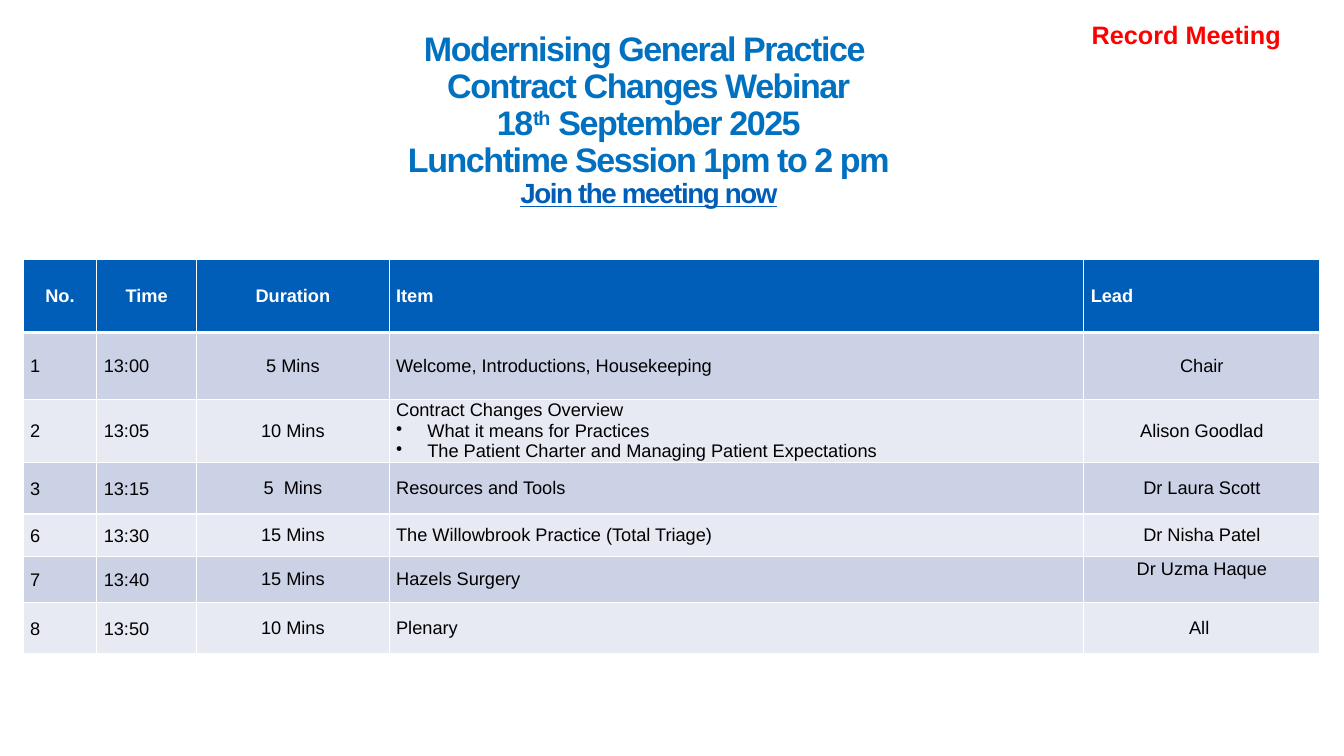
from copy import deepcopy

from lxml import etree
from pptx import Presentation
from pptx.dml.color import RGBColor
from pptx.enum.text import MSO_ANCHOR, MSO_AUTO_SIZE, PP_ALIGN
from pptx.oxml.ns import qn
from pptx.util import Inches, Pt

LEFT, CENTER = PP_ALIGN.LEFT, PP_ALIGN.CENTER
MIDDLE = MSO_ANCHOR.MIDDLE
NO_FIT, GROW = MSO_AUTO_SIZE.NONE, MSO_AUTO_SIZE.SHAPE_TO_FIT_TEXT

COLORS = {
    "title": "0070C0", "header": "005EB8", "alert": "FF0000",
    "text": "000000", "white": "FFFFFF",
    "odd_row": "CCD2E6", "even_row": "E7EAF3",
}

# Each title line is a list of (text, size, colour, superscript, underline)
TITLE_LINES = [
    [("Modernising General Practice ", 24.3, "title", False, False)],
    [("Contract Changes Webinar", 24.3, "title", False, False)],
    [("18", 24.3, "title", False, False),
     ("th", 24.3, "title", True, False),
     (" September 2025", 24.3, "title", False, False)],
    [("Lunchtime Session 1pm to 2 pm", 24.3, "title", False, False)],
    [("Join the meeting now", 19.8, "header", False, True)],
]

# Lines of an item after the first are bullets
AGENDA = [
    ("No.", "Time", "Duration", "Item", "Lead"),
    ("1", "13:00", "5 Mins", "Welcome, Introductions, Housekeeping", "Chair"),
    ("2", "13:05", "10 Mins",
     "Contract Changes Overview\nWhat it means for Practices\n"
     "The Patient Charter and Managing Patient Expectations",
     "Alison Goodlad"),
    ("3", "13:15", "5  Mins", "Resources and Tools", "Dr Laura Scott"),
    ("6", "13:30", "15 Mins", "The Willowbrook Practice (Total Triage)", "Dr Nisha Patel"),
    ("7", "13:40", "15 Mins", "Hazels Surgery", "Dr Uzma Haque"),
    ("8", "13:50", "10 Mins", "Plenary", "All "),
]
COLUMN_WIDTHS = [0.73, 0.99, 1.91, 6.89, 2.34]
ROW_HEIGHTS = [0.73, 0.66, 0.63, 0.51, 0.42, 0.46, 0.51]
HEADER_ALIGN = [CENTER, CENTER, CENTER, LEFT, LEFT]
BODY_ALIGN = [LEFT, LEFT, CENTER, LEFT, CENTER]
RAISED_LEAD = (5, 4)


class AgendaSlide:
    def __init__(self, slide, font="Arial"):
        self.slide = slide
        self.font = font

    def style(self, font, size, color, bold=False):
        font.name, font.size, font.bold = self.font, Pt(size), bold
        font.color.rgb = RGBColor.from_string(COLORS[color])

    def place(self, shape, left, top, width, height):
        shape.left, shape.top = Inches(left), Inches(top)
        shape.width, shape.height = Inches(width), Inches(height)

    def title(self, lines, *box):
        title = self.slide.shapes.title
        self.place(title, *box)
        frame = title.text_frame
        frame.word_wrap, frame.auto_size = True, NO_FIT
        frame.vertical_anchor = MIDDLE
        paragraph = frame.paragraphs[0]
        paragraph.alignment, paragraph.line_spacing = CENTER, 0.9
        properties = None
        for line in lines:
            if properties is not None:
                # The break takes the size of the line it ends
                paragraph.add_line_break()
                paragraph._p[-1].append(deepcopy(properties))
            for text, size, color, superscript, underline in line:
                run = paragraph.add_run()
                run.text = text
                self.style(run.font, size, color, bold=True)
                run.font.underline = underline
                properties = run._r.get_or_add_rPr()
                properties.set("spc", "-100")
                if superscript:
                    properties.set("baseline", "30000")

    def label(self, text, size, color, *box):
        label = self.slide.shapes.add_textbox(*map(Inches, box))
        frame = label.text_frame
        frame.word_wrap, frame.auto_size = True, GROW
        paragraph = frame.paragraphs[0]
        paragraph.text = text
        self.style(paragraph.font, size, color, bold=True)

    def borders(self, cell, top, bottom):
        properties = cell._tc.get_or_add_tcPr()
        for side, width in (("L", 1), ("R", 1), ("T", top), ("B", bottom)):
            line = etree.SubElement(properties, qn(f"a:ln{side}"), w=str(Pt(width)))
            fill = etree.SubElement(line, qn("a:solidFill"))
            etree.SubElement(fill, qn("a:srgbClr"), val=COLORS["white"])

    def bullet(self, paragraph):
        properties = paragraph._p.get_or_add_pPr()
        properties.set("marL", str(Inches(0.31)))
        properties.set("indent", str(-Inches(0.31)))
        etree.SubElement(properties, qn("a:buChar"), char="•")

    def cell(self, cell, text, row, column):
        header = row == 0
        self.borders(cell, 3 if row == 1 else 1, 3 if header else 1)
        fill = "header" if header else "odd_row" if row % 2 else "even_row"
        cell.fill.solid()
        cell.fill.fore_color.rgb = RGBColor.from_string(COLORS[fill])
        cell.vertical_anchor = MIDDLE
        cell.margin_left = cell.margin_right = Inches(0.07)
        cell.margin_top = 0
        cell.margin_bottom = Inches(0.2 if (row, column) == RAISED_LEAD else 0)
        cell.text = text
        for index, paragraph in enumerate(cell.text_frame.paragraphs):
            paragraph.alignment = (HEADER_ALIGN if header else BODY_ALIGN)[column]
            if column < 2 or (row < 2 and column < 4):
                paragraph.line_spacing = 1.07
            if index:
                self.bullet(paragraph)
            self.style(paragraph.font, 13, "white" if header else "text", header)

    def table(self, rows, left, top):
        table = self.slide.shapes.add_table(
            len(rows), len(COLUMN_WIDTHS), Inches(left), Inches(top),
            Inches(sum(COLUMN_WIDTHS)), Inches(sum(ROW_HEIGHTS))).table
        for column, width in zip(table.columns, COLUMN_WIDTHS):
            column.width = Inches(width)
        for row, height in zip(table.rows, ROW_HEIGHTS):
            row.height = Inches(height)
        for r, texts in enumerate(rows):
            for c, text in enumerate(texts):
                self.cell(table.cell(r, c), text, r, c)


def main():
    presentation = Presentation()
    presentation.slide_width, presentation.slide_height = Inches(13.33), Inches(7.5)
    layout = presentation.slide_layouts[5]
    agenda = AgendaSlide(presentation.slides.add_slide(layout))

    # Heading
    agenda.title(TITLE_LINES, 0, 0.29, 12.87, 1.82)
    # Agenda table
    agenda.table(AGENDA, 0.23, 2.57)
    # Reminder in the corner
    agenda.label("Record Meeting", 18, "alert", 10.73, 0.14, 2.4, 0.4)

    presentation.save("out.pptx")


if __name__ == "__main__":
    main()
